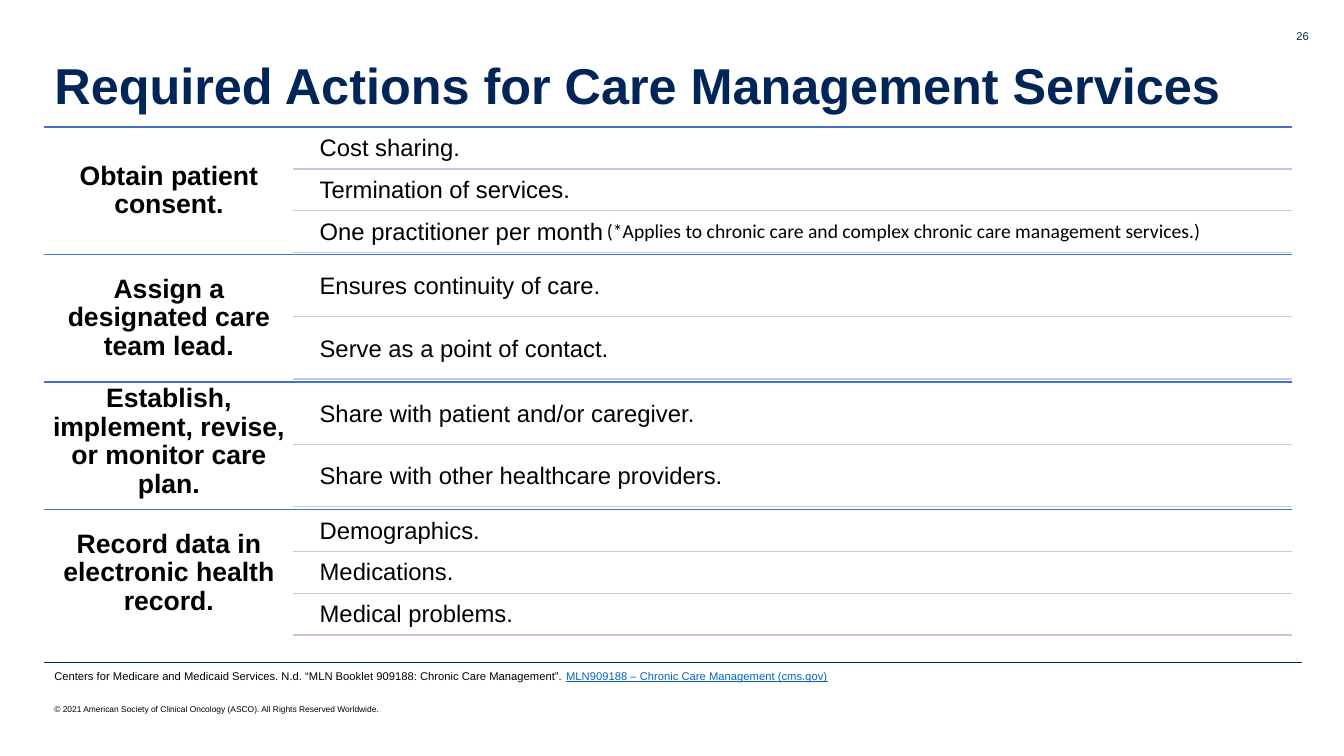
from dataclasses import dataclass

from lxml import etree
from pptx import Presentation
from pptx.dml.color import RGBColor
from pptx.enum.shapes import MSO_CONNECTOR
from pptx.enum.text import MSO_ANCHOR as Anchor, MSO_AUTO_SIZE as AutoSize, PP_ALIGN as Align
from pptx.oxml.ns import qn
from pptx.util import Inches, Pt


@dataclass(frozen=True)
class Theme:
    font: str = "Arial"
    note_font: str = "Calibri"
    navy: str = "002557"
    black: str = "000000"
    section_rule: str = "4472C4"
    row_rule: str = "C1C9E4"
    link: str = "0563C1"
    title_size: float = 36
    label_size: float = 19
    row_size: float = 17
    note_size: float = 14
    small_size: float = 8
    copyright_size: float = 6


THEME = Theme()
LEFT, LABEL_WIDTH, RIGHT = 0.44, 2.47, 12.81
ROW_LEFT = 3.1
SECTIONS_TOP, SECTION_HEIGHT = 1.26, 1.265
ROW_GAP_RATIO = 0.05

SECTIONS = [
    ("Obtain patient consent.", 0,
     ["Cost sharing.", "Termination of services.", "One practitioner per month"]),
    ("Assign a designated care team lead.", 0,
     ["Ensures continuity of care.", "Serve as a point of contact."]),
    ("Establish, implement, revise, or monitor care plan.", -0.04,
     ["Share with patient and/or caregiver.", "Share with other healthcare providers."]),
    ("Record data in electronic health record.", 0,
     ["Demographics.", "Medications.", "Medical problems."]),
]


def set_font(font, size, color=THEME.black, name=THEME.font, bold=False):
    font.name = name
    font.size = Pt(size)
    font.bold = bold
    font.color.rgb = RGBColor.from_string(color)


def set_margins(frame, left, top, right, bottom):
    frame.margin_left, frame.margin_top = Inches(left), Inches(top)
    frame.margin_right, frame.margin_bottom = Inches(right), Inches(bottom)


def add_text(slide, box, text, size, margins=(0.1, 0.05, 0.1, 0.05), anchor=Anchor.TOP,
             align=Align.LEFT, spacing=1.0, **font):
    shape = slide.shapes.add_textbox(*map(Inches, box))
    frame = shape.text_frame
    frame.word_wrap = True
    frame.vertical_anchor = anchor
    set_margins(frame, *margins)
    paragraph = frame.paragraphs[0]
    paragraph.text = text
    paragraph.alignment = align
    paragraph.line_spacing = spacing
    set_font(paragraph.font, size, **font)
    return paragraph


def add_rule(slide, left, right, top, color, width=1):
    rule = slide.shapes.add_connector(
        MSO_CONNECTOR.STRAIGHT, Inches(left), Inches(top), Inches(right), Inches(top))
    rule.line.color.rgb = RGBColor.from_string(color)
    rule.line.width = Pt(width)
    etree.SubElement(rule.element.spPr, qn("a:effectLst"))


def add_title(slide, text):
    title = slide.shapes.title
    title.left, title.top = Inches(LEFT), Inches(0.4)
    title.width, title.height = Inches(11.98), Inches(1.44)
    frame = title.text_frame
    frame.word_wrap = True
    frame.auto_size = AutoSize.NONE
    frame.vertical_anchor = Anchor.TOP
    set_margins(frame, 0.1, 0.2, 0.1, 0.05)
    paragraph = frame.paragraphs[0]
    paragraph.text = text
    paragraph.alignment = Align.LEFT
    paragraph.line_spacing = 0.9
    set_font(paragraph.font, THEME.title_size, THEME.navy, bold=True)


def add_section(slide, top, label, label_shift, rows):
    add_rule(slide, LEFT, RIGHT, top, THEME.section_rule)
    add_text(slide, (LEFT, top + label_shift, LABEL_WIDTH, SECTION_HEIGHT), label,
             THEME.label_size, (0.08,) * 4, Anchor.MIDDLE, Align.CENTER, 0.9, bold=True)
    count = len(rows)
    height = SECTION_HEIGHT / (count + ROW_GAP_RATIO * (count + 1))
    gap = height * ROW_GAP_RATIO
    for index, text in enumerate(rows):
        row_top = top + gap + index * (height + gap)
        add_text(slide, (ROW_LEFT, row_top, RIGHT - ROW_LEFT, height), text,
                 THEME.row_size, (0.07,) * 4, Anchor.MIDDLE, spacing=0.9)
        add_rule(slide, LEFT + LABEL_WIDTH, RIGHT, row_top + height, THEME.row_rule)


def add_source(slide, citation, link_text):
    paragraph = add_text(slide, (LEFT, 6.59, 9.66, 0.24), citation, THEME.small_size)
    run = paragraph.add_run()
    run.text = link_text
    run.font.underline = True
    run.font.color.rgb = RGBColor.from_string(THEME.link)


def main():
    presentation = Presentation()
    presentation.slide_width = Inches(13.33)
    presentation.slide_height = Inches(7.5)
    slide = presentation.slides.add_slide(presentation.slide_layouts[5])

    add_rule(slide, LEFT, 12.91, 6.57, THEME.navy, 0.25)
    add_title(slide, "Required Actions for Care Management Services")
    for index, section in enumerate(SECTIONS):
        add_section(slide, SECTIONS_TOP + index * SECTION_HEIGHT, *section)

    add_text(slide, (LEFT, 6.84, 4.5, 0.4),
             "© 2021 American Society of Clinical Oncology (ASCO). All Rights Reserved Worldwide.",
             THEME.copyright_size, anchor=Anchor.MIDDLE)
    add_text(slide, (12.14, 0.24, 0.94, 0.4), "26", THEME.small_size,
             align=Align.RIGHT, color=THEME.navy)
    add_text(slide, (5.83, 2.12, 6.41, 0.34),
             "(*Applies to chronic care and complex chronic care management services.)",
             THEME.note_size, (0.19, 0.05, 0.1, 0.05), name=THEME.note_font)
    add_source(slide,
               "Centers for Medicare and Medicaid Services. N.d. “MLN Booklet 909188: "
               "Chronic Care Management”. ",
               "MLN909188 – Chronic Care Management (cms.gov)")
    presentation.save("out.pptx")


if __name__ == "__main__":
    main()
